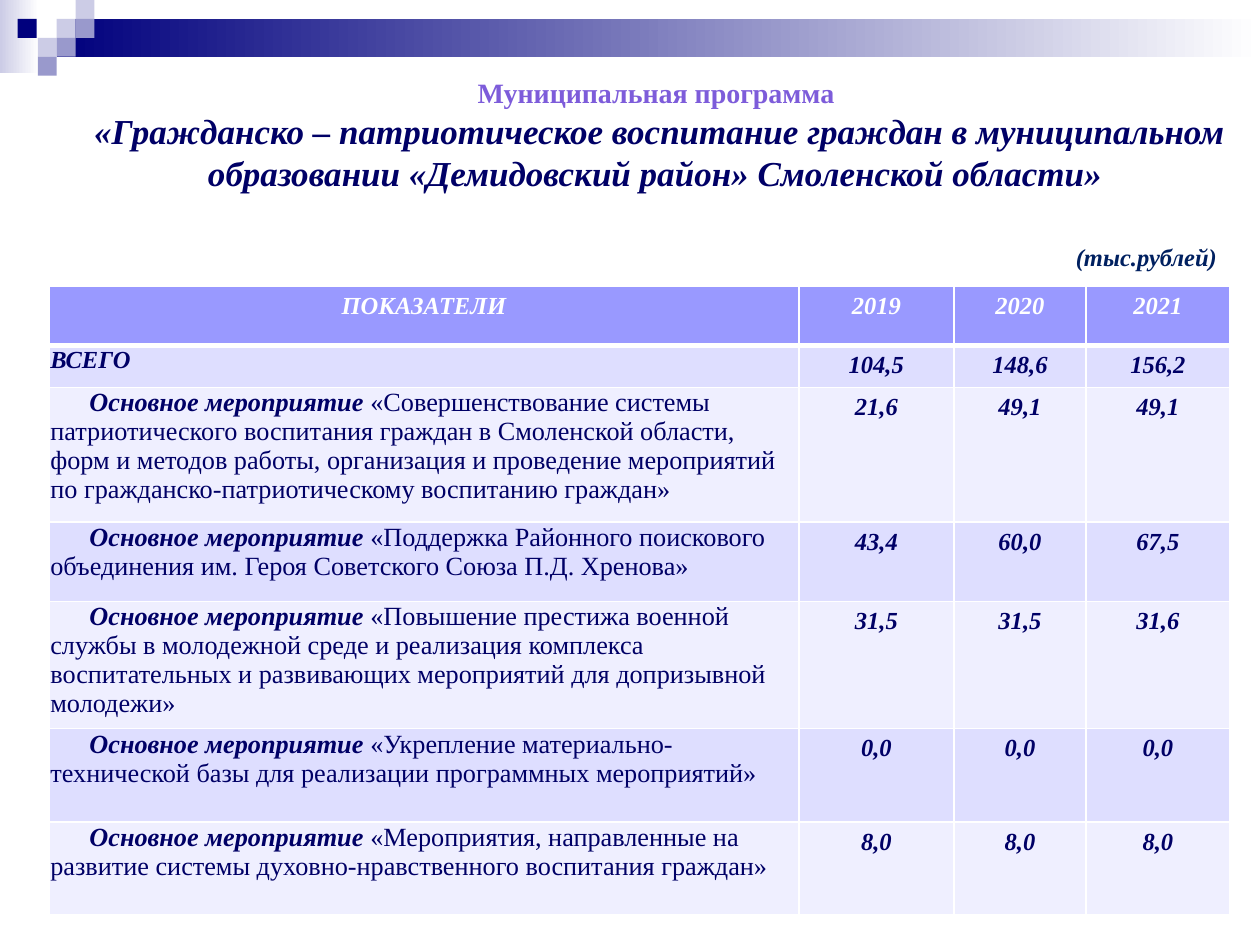
import pptx
import pptx.util
import pptx.dml.color
import pptx.enum.shapes
import pptx.enum.text
import pptx.oxml
import pptx.oxml.ns
from pptx.util import Inches

RGBColor = pptx.dml.color.RGBColor
NAVY = RGBColor(0x00, 0x00, 0x7D)
LAVENDER = RGBColor(0xCC, 0xCC, 0xE6)
PERIWINKLE = RGBColor(0x99, 0x99, 0xCC)
WHITE = RGBColor(0xFF, 0xFF, 0xFF)
VIOLET = RGBColor(0x7D, 0x5C, 0xDA)
INK = RGBColor(0x00, 0x00, 0x66)
UNIT_BLUE = RGBColor(0x00, 0x20, 0x60)
HEADER_FILL = RGBColor(0x99, 0x99, 0xFF)
BAND_DARK = RGBColor(0xDE, 0xDE, 0xFF)
BAND_LIGHT = RGBColor(0xEF, 0xEF, 0xFF)
CENTER = pptx.enum.text.PP_ALIGN.CENTER
LEFT = pptx.enum.text.PP_ALIGN.LEFT


def add_text(p, text, size=14, color=INK, bold=True, italic=True, align=CENTER):
    p.alignment = align
    r = p.add_run()
    r.text = text
    r.font.name = "Times New Roman"
    r.font.size = pptx.util.Pt(size)
    r.font.bold = bold
    r.font.italic = italic
    r.font.color.rgb = color


def add_block(left, top, width, height, color, fade=False):
    """Add a borderless rectangle, fading to white on the right if asked."""
    sp = s.shapes.add_shape(pptx.enum.shapes.MSO_SHAPE.RECTANGLE, Inches(left),
                            Inches(top), Inches(width), Inches(height))
    sp.shadow.inherit = False
    sp.line.fill.background()
    if fade:
        sp.fill.gradient()
        sp.fill.gradient_angle = 0
        for stop, stop_color in zip(sp.fill.gradient_stops, (color, WHITE)):
            stop.color.rgb = stop_color
    else:
        sp.fill.solid()
        sp.fill.fore_color.rgb = color


prs = pptx.Presentation()
prs.slide_width, prs.slide_height = Inches(10), Inches(7.5)
s = prs.slides.add_slide(prs.slide_layouts[6])

# Header band with its checkered corner
add_block(0, 0, 0.31, 0.58, LAVENDER, fade=True)
add_block(0.45, 0.15, 9.55, 0.3, NAVY, fade=True)
SQUARE = 0.15
for left, top, color in [
    (0.45, 0.15, LAVENDER), (0.6, 0, LAVENDER), (0.6, 0.15, PERIWINKLE),
    (0.3, 0.3, LAVENDER), (0.14, 0.15, NAVY), (0.45, 0.3, PERIWINKLE),
    (0.3, 0.45, PERIWINKLE),
]:
    add_block(left, top, SQUARE, SQUARE, color)

# Title and unit note
tf = s.shapes.add_textbox(Inches(0.47), Inches(0.55), Inches(9.53), Inches(1.04)).text_frame
tf.word_wrap = True
add_text(tf.paragraphs[0], "Муниципальная программа ", size=16, color=VIOLET, italic=False)
add_text(tf.add_paragraph(), "«Гражданско – патриотическое воспитание граждан в муниципальном "
         "образовании «Демидовский район» Смоленской области» ", size=20)

tf = s.shapes.add_textbox(Inches(8.44), Inches(1.87), Inches(1.33), Inches(0.34)).text_frame
tf.word_wrap = False
add_text(tf.paragraphs[0], "(тыс.рублей)", color=UNIT_BLUE, align=LEFT)

# Table of indicators
ACTIVITY = "Основное мероприятие "
rows = [
    (0.47, "ПОКАЗАТЕЛИ", "2019", "2020", "2021"),
    (0.31, "ВСЕГО", "104,5", "148,6", "156,2"),
    (1.07, "«Совершенствование системы патриотического воспитания граждан в Смоленской "
     "области, форм и методов работы, организация и проведение мероприятий по "
     "гражданско-патриотическому воспитанию граждан»", "21,6", "49,1", "49,1"),
    (0.63, "«Поддержка Районного поискового объединения им. Героя Советского Союза "
     "П.Д. Хренова»", "43,4", "60,0", "67,5"),
    (0.94, "«Повышение престижа военной службы в молодежной среде и реализация комплекса "
     "воспитательных и развивающих мероприятий для допризывной молодежи»",
     "31,5", "31,5", "31,6"),
    (0.74, "«Укрепление материально-технической базы для реализации программных "
     "мероприятий»", "0,0", "0,0", "0,0"),
    (0.74, "«Мероприятия, направленные на развитие системы духовно-нравственного "
     "воспитания граждан»", "8,0", "8,0", "8,0"),
]
col_widths = [5.95, 1.23, 1.05, 1.14]
table = s.shapes.add_table(len(rows), len(col_widths), Inches(0.39), Inches(2.27),
                           Inches(9.38), Inches(4.99)).table
for column, width in zip(table.columns, col_widths):
    column.width = Inches(width)

for i, (height, *texts) in enumerate(rows):
    table.rows[i].height = Inches(height)
    fill = HEADER_FILL if i == 0 else BAND_DARK if i % 2 else BAND_LIGHT
    for j, text in enumerate(texts):
        cell = table.cell(i, j)
        tcPr = cell._tc.get_or_add_tcPr()
        for side in "LRTB":
            thick = (i, side) in [(0, "B"), (1, "T")]
            tcPr.append(pptx.oxml.parse_xml(
                f'<a:ln{side} {pptx.oxml.ns.nsdecls("a")} w="{pptx.util.Pt(3 if thick else 1)}">'
                f'<a:solidFill><a:srgbClr val="{WHITE}"/></a:solidFill></a:ln{side}>'))
        cell.fill.solid()
        cell.fill.fore_color.rgb = fill
        p = cell.text_frame.paragraphs[0]
        if i == 0:
            add_text(p, text, color=WHITE)
        elif j > 0:
            add_text(p, text)
        else:
            cell.margin_left = cell.margin_right = cell.margin_top = Inches(0.01)
            cell.margin_bottom = 0
            if i == 1:
                add_text(p, text, align=LEFT)
            else:
                p._p.get_or_add_pPr().set("indent", str(Inches(0.31)))
                add_text(p, ACTIVITY, size=15, align=LEFT)
                add_text(p, text, size=15, bold=False, italic=False, align=LEFT)

prs.save("out.pptx")
